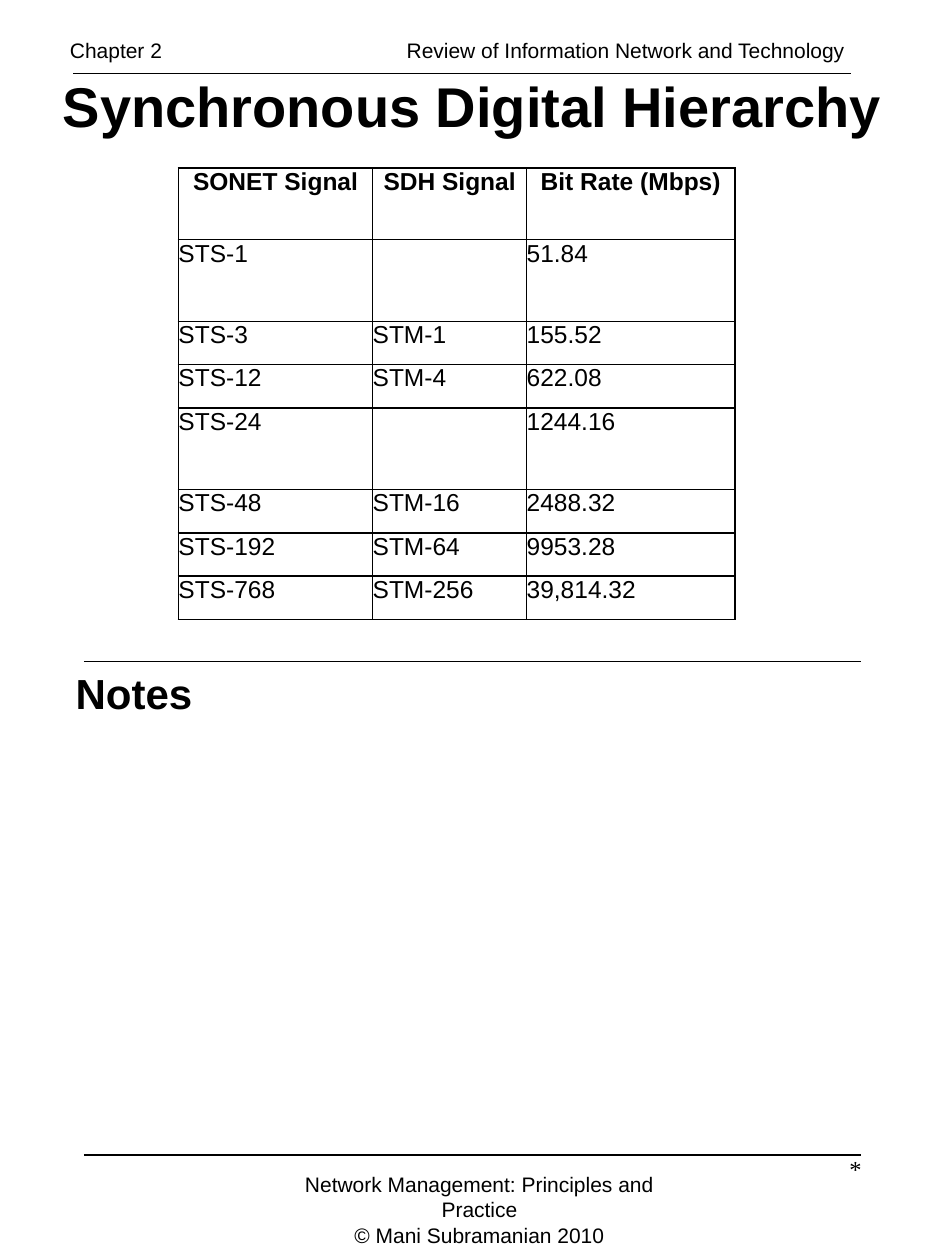
from lxml import etree
from pptx import Presentation
from pptx.dml.color import RGBColor
from pptx.enum.shapes import MSO_CONNECTOR
from pptx.enum.text import MSO_ANCHOR, PP_ALIGN
from pptx.oxml.ns import qn
from pptx.util import Pt

BLACK = RGBColor(0x00, 0x00, 0x00)
WHITE = RGBColor(0xFF, 0xFF, 0xFF)
LEFT, CENTER, RIGHT = PP_ALIGN.LEFT, PP_ALIGN.CENTER, PP_ALIGN.RIGHT
TOP, MIDDLE = MSO_ANCHOR.TOP, MSO_ANCHOR.MIDDLE
STRAIGHT = MSO_CONNECTOR.STRAIGHT

SIGNALS = [
    ("SONET Signal", "SDH Signal", "Bit Rate (Mbps)"),
    ("STS-1", "", "51.84"),
    ("STS-3", "STM-1", "155.52"),
    ("STS-12", "STM-4", "622.08"),
    ("STS-24", "", "1244.16"),
    ("STS-48", "STM-16", "2488.32"),
    ("STS-192", "STM-64", "9953.28"),
    ("STS-768", "STM-256", "39,814.32"),
]
COLUMN_WIDTHS = (111, 88, 119)
HEADER_HEIGHT, TALL_ROW, SHORT_ROW = 41, 46.6, 24.8


class SlideBuilder:
    font = "Arial"
    color = BLACK
    line_width = 1

    def __init__(self, prs):
        self.slide = prs.slides.add_slide(prs.slide_layouts[5])

    def format(self, p, size, bold=False, align=LEFT, font=None):
        p.alignment = align
        p.font.size = Pt(size)
        p.font.bold = bold
        p.font.name = font or self.font
        p.font.color.rgb = self.color

    def fill_frame(self, tf, text, size, anchor=TOP, inset=7.2, **style):
        tf.word_wrap = True
        tf.vertical_anchor = anchor
        tf.margin_left, tf.margin_right = Pt(inset), Pt(7.2)
        tf.margin_top = tf.margin_bottom = Pt(3.6)
        tf.text = text
        for p in tf.paragraphs:
            self.format(p, size, **style)

    def title(self, text, x, y, w, h, size):
        sp = self.slide.shapes.title
        sp.left, sp.top, sp.width, sp.height = Pt(x), Pt(y), Pt(w), Pt(h)
        self.fill_frame(sp.text_frame, text, size, MIDDLE, bold=True, align=CENTER)

    def text(self, text, x, y, w, h, size, **style):
        sp = self.slide.shapes.add_textbox(Pt(x), Pt(y), Pt(w), Pt(h))
        self.fill_frame(sp.text_frame, text, size, **style)
        return sp.text_frame.paragraphs[0]

    def running_head(self, left, right, tab, *box, **style):
        p = self.text(f"{left}\t{right}", *box, **style)
        tabs = etree.Element(qn("a:tabLst"))
        etree.SubElement(tabs, qn("a:tab"), pos=str(Pt(tab)), algn="r")
        p._p.get_or_add_pPr().insert_element_before(tabs, "a:defRPr", "a:extLst")

    def rule(self, x, y, w):
        line = self.slide.shapes.add_connector(STRAIGHT, Pt(x), Pt(y), Pt(x + w), Pt(y))
        line.line.color.rgb = self.color
        line.line.width = Pt(self.line_width)
        etree.SubElement(line._element.spPr, qn("a:effectLst"))

    def border(self, cell):
        tcPr = cell._tc.get_or_add_tcPr()
        for i, side in enumerate(("lnL", "lnR", "lnT", "lnB")):
            ln = etree.Element(qn(f"a:{side}"), w=str(Pt(self.line_width)))
            fill = etree.SubElement(ln, qn("a:solidFill"))
            etree.SubElement(fill, qn("a:srgbClr"), val=str(self.color))
            tcPr.insert(i, ln)

    def table(self, rows, x, y, widths, heights, size):
        frame = self.slide.shapes.add_table(
            len(rows), len(widths), Pt(x), Pt(y), Pt(sum(widths)), Pt(sum(heights)))
        table = frame.table
        for column, width in zip(table.columns, widths):
            column.width = Pt(width)
        for r, (values, height) in enumerate(zip(rows, heights)):
            table.rows[r].height = Pt(height)
            for c, value in enumerate(values):
                cell = table.cell(r, c)
                cell.margin_left = cell.margin_right = 0
                cell.margin_top = cell.margin_bottom = 0
                cell.fill.solid()
                cell.fill.fore_color.rgb = WHITE
                cell.text = value
                self.format(cell.text_frame.paragraphs[0], size,
                            bold=r == 0, align=LEFT if r else CENTER)
                self.border(cell)


def main():
    prs = Presentation()
    prs.slide_width, prs.slide_height = Pt(540), Pt(720)
    s = SlideBuilder(prs)

    s.running_head("Chapter 2", "Review of Information Network and Technology", 443,
                   0, 18, 540, 21.6, 12, inset=40)
    s.rule(42, 42, 444)
    s.title("Synchronous Digital Hierarchy", 0, 42, 540, 36, 32)

    heights = [HEADER_HEIGHT] + [SHORT_ROW if sdh else TALL_ROW for _, sdh, _ in SIGNALS[1:]]
    s.table(SIGNALS, 102, 96, COLUMN_WIDTHS, heights, 14)

    s.rule(48, 378, 444)
    s.text("Notes", 0, 378, 120, 36, 24, bold=True, inset=43.2)

    s.rule(48, 660, 444)
    s.text("Network Management: Principles and Practice\n© Mani Subramanian 2010",
           144, 666, 260, 36, 12, align=CENTER)
    s.text("*", 387.5, 656, 112, 48, 14, align=RIGHT, font="Times New Roman")

    prs.save("out.pptx")


if __name__ == "__main__":
    main()
